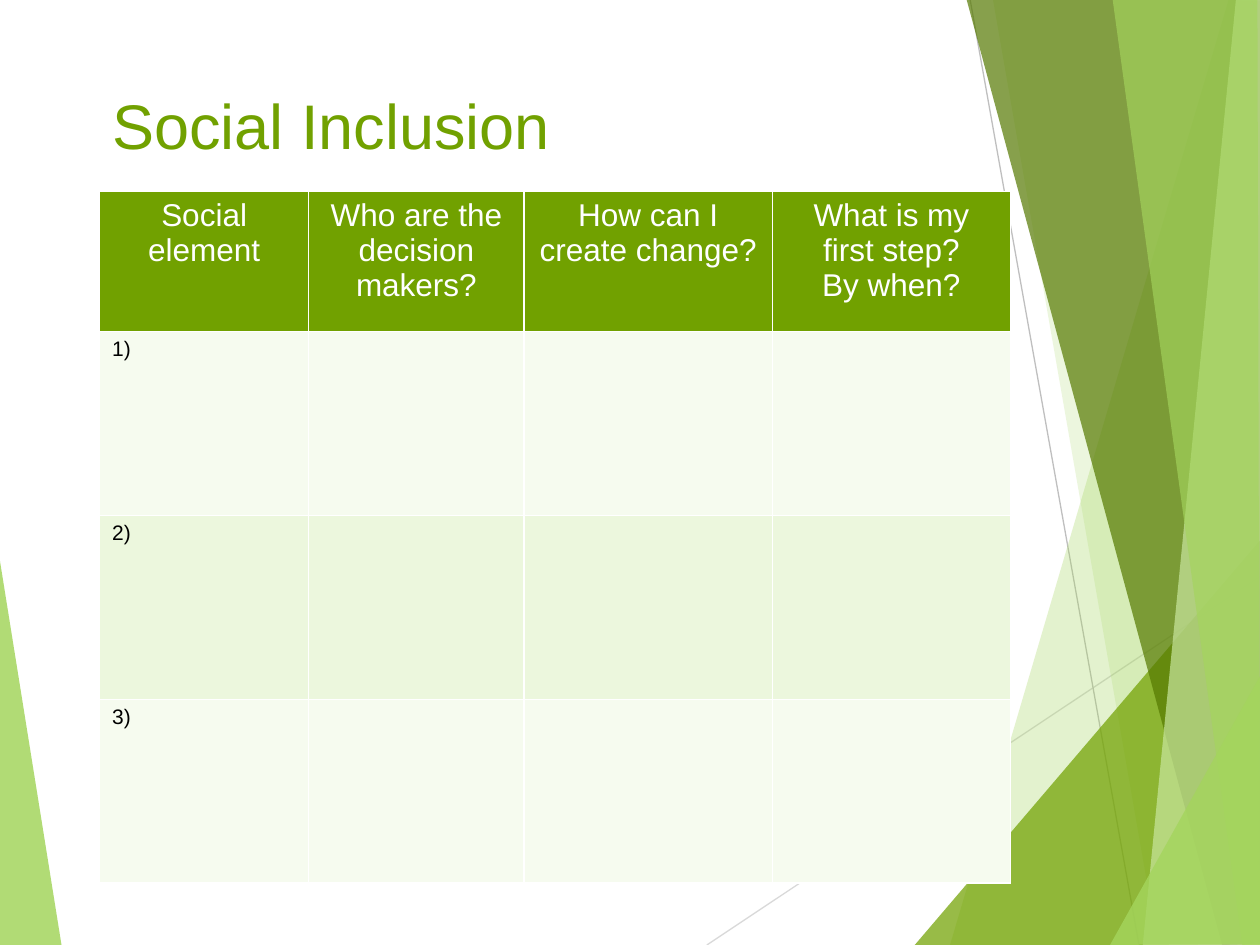
from dataclasses import dataclass

from lxml.etree import SubElement
from pptx import Presentation
from pptx.dml.color import RGBColor as RGB
from pptx.enum.shapes import MSO_CONNECTOR as Connector
from pptx.enum.text import MSO_ANCHOR as Anchor, PP_ALIGN as Align
from pptx.oxml.ns import qn
from pptx.util import Inches, Pt


@dataclass(frozen=True)
class Theme:
    font: str = "Arial"
    green: str = "71A100"
    dark_green: str = "557900"
    light_green: str = "A4D55D"
    pale_green: str = "C8E69E"
    odd_row: str = "F6FBEF"
    even_row: str = "ECF7DD"
    white: str = "FFFFFF"
    black: str = "000000"
    light_gray: str = "D9D9D9"
    gray: str = "BFBFBF"
    title_size: int = 36
    header_size: int = 18
    body_size: int = 12


theme = Theme()


def style_paragraph(paragraph, size, color, align):
    paragraph.alignment = align
    paragraph.font.name = theme.font
    paragraph.font.size = Pt(size)
    paragraph.font.color.rgb = RGB.from_string(color)


def add_border(cell, side):
    edge = SubElement(cell._tc.get_or_add_tcPr(), qn(f"a:{side}"), w=str(Pt(1)))
    fill = SubElement(edge, qn("a:solidFill"))
    SubElement(fill, qn("a:srgbClr"), val=theme.white)


prs = Presentation()
prs.slide_width, prs.slide_height = Inches(10), Inches(7.5)
slide = prs.slides.add_slide(prs.slide_layouts[5])

rays = [
    ((5.61, 7.5), (10.01, 4.57), theme.light_gray),
    ((7.7, 0), (9.04, 7.5), theme.gray),
]
for start, end, color in rays:
    ray = slide.shapes.add_connector(Connector.STRAIGHT, *map(Inches, start + end))
    ray.line.color.rgb = RGB.from_string(color)
    ray.line.width = Pt(0.75)
    SubElement(ray.element.spPr, qn("a:effectLst"))

facets = [
    (theme.light_green, 85, [(-0.01, 4.39), (0.49, 7.51), (-0.01, 7.5)]),
    (theme.light_green, 30, [(9.75, 0), (7.54, 7.5), (10.02, 7.51), (10.01, 0.01)]),
    (theme.light_green, 20, [(7.88, -0.01), (9.19, 7.5), (10.01, 7.5), (10.01, -0.01)]),
    (theme.green, 72, [(7.26, 7.5), (10, 4.29), (10.01, 7.5)]),
    (theme.dark_green, 70, [(7.67, -0.01), (9.7, 7.5), (10.01, 7.49), (10.01, -0.01)]),
    (theme.pale_green, 70, [(9.81, -0.01), (9.07, 7.5), (10.01, 7.5), (10, -0.01)]),
    (theme.light_green, 65, [(8.83, -0.01), (9.86, 7.5), (10, 7.5), (9.98, -0.01)]),
    (theme.light_green, 80, [(8.81, 7.5), (10.01, 5.35), (10.01, 7.49)]),
]
for color, opacity, corners in facets:
    first, *others = [(Inches(x), Inches(y)) for x, y in corners]
    outline = slide.shapes.build_freeform(*first)
    outline.add_line_segments(others, close=True)
    facet = outline.convert_to_shape()
    facet.shadow.inherit = False
    facet.line.fill.background()
    facet.fill.solid()
    facet.fill.fore_color.rgb = RGB.from_string(color)
    fill_color = facet.element.spPr.find(qn("a:solidFill")).find(qn("a:srgbClr"))
    SubElement(fill_color, qn("a:alpha"), val=str(opacity * 1000))

title = slide.shapes.title
title.left, title.top = Inches(0.79), Inches(0.64)
title.width, title.height = Inches(6.94), Inches(1.44)
title.text_frame.text = "Social Inclusion"
title.text_frame.vertical_anchor = Anchor.TOP
style_paragraph(title.text_frame.paragraphs[0], theme.title_size, theme.green, Align.LEFT)

rows = [
    [
        "Social element",
        "Who are the decision makers?",
        "How can I create change?",
        "What is my first step?\nBy when?",
    ],
    ["1)", "", "", ""],
    ["2)", "", "", ""],
    ["3)", "", "", ""],
]
column_widths = [1.66, 1.71, 1.97, 1.89]
row_heights = [1.11, 1.46, 1.46, 1.46]
row_fills = [theme.green, theme.odd_row, theme.even_row, theme.odd_row]

plan = slide.shapes.add_table(
    len(rows), len(column_widths), Inches(0.79), Inches(1.52),
    Inches(sum(column_widths)), Inches(sum(row_heights)),
).table
for column, width in zip(plan.columns, column_widths):
    column.width = Inches(width)
for row, height in zip(plan.rows, row_heights):
    row.height = Inches(height)

for r, texts in enumerate(rows):
    is_header = r == 0
    size = theme.header_size if is_header else theme.body_size
    color = theme.white if is_header else theme.black
    align = Align.CENTER if is_header else Align.LEFT
    for c, text in enumerate(texts):
        cell = plan.cell(r, c)
        for side in ("lnL", "lnR", "lnT", "lnB"):
            add_border(cell, side)
        cell.fill.solid()
        cell.fill.fore_color.rgb = RGB.from_string(row_fills[r])
        if text:
            cell.text = text
            for paragraph in cell.text_frame.paragraphs:
                style_paragraph(paragraph, size, color, align)
                paragraph.font.bold = False

prs.save("out.pptx")
